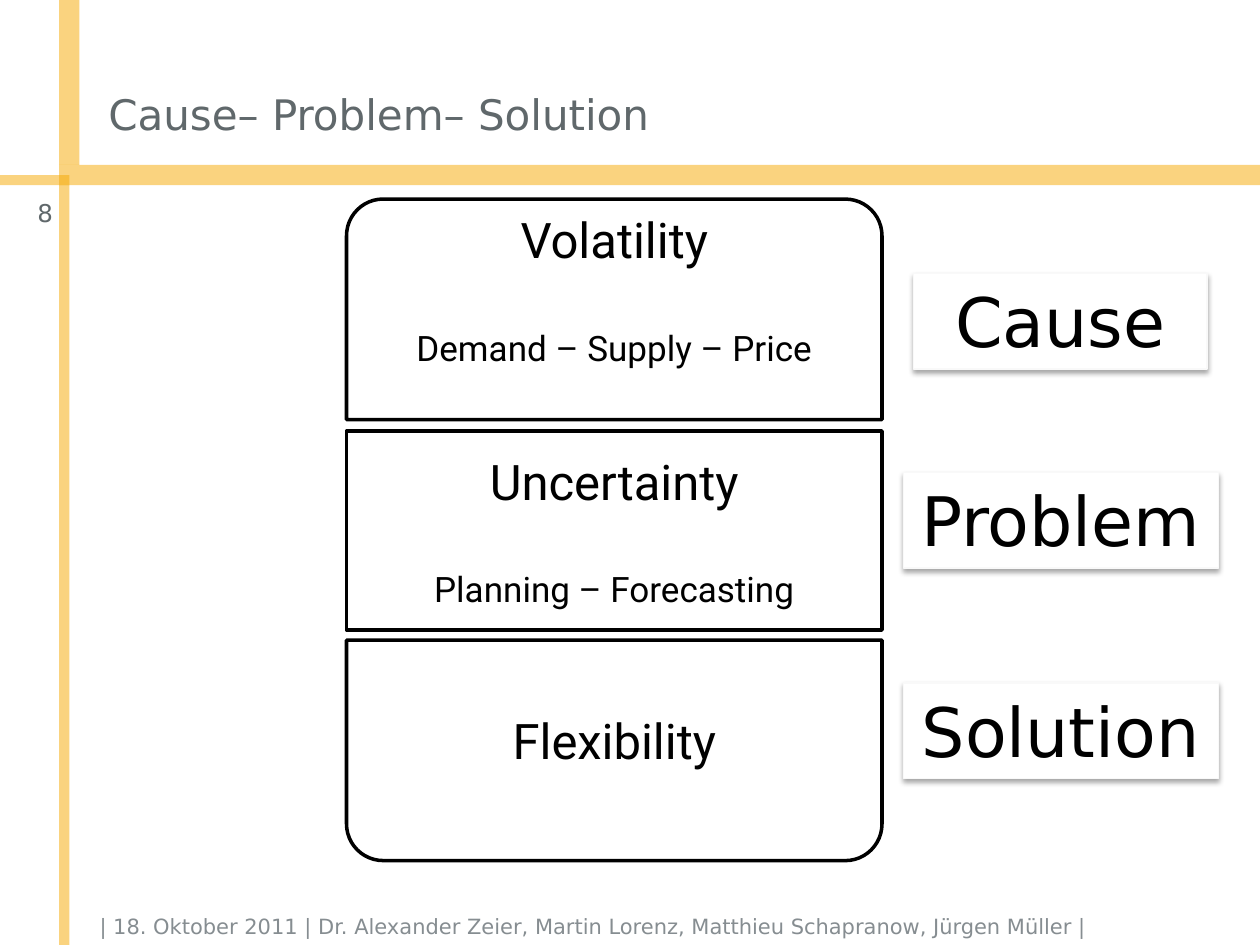
from lxml import etree
from pptx import Presentation
from pptx.dml.color import RGBColor
from pptx.enum.shapes import MSO_SHAPE
from pptx.enum.text import MSO_ANCHOR, MSO_AUTO_SIZE, PP_ALIGN
from pptx.oxml import parse_xml
from pptx.oxml.ns import nsdecls, qn
from pptx.util import Inches, Pt

RECT = MSO_SHAPE.RECTANGLE
ROUND_TOP = MSO_SHAPE.ROUND_2_SAME_RECTANGLE
TOP, MIDDLE, BOTTOM = MSO_ANCHOR.TOP, MSO_ANCHOR.MIDDLE, MSO_ANCHOR.BOTTOM
LEFT, CENTER, RIGHT = PP_ALIGN.LEFT, PP_ALIGN.CENTER, PP_ALIGN.RIGHT

THEME = {
    "sans": "DejaVu Sans", "block_font": "Roboto",
    "accent": "F6A800", "white": "FFFFFF", "black": "000000",
    "gray": "60686B", "footer": "868D91", "label_line": "F9F9F9",
    "title_size": 24, "footer_size": 12, "number_size": 14,
    "heading_size": 28, "detail_size": 20, "label_size": 39,
}


def write(shape, lines, font, color, align, anchor, margin=0.0, gap=0):
    """Fill a shape with (text, size) lines, keeping a gap between them."""
    frame = shape.text_frame
    frame_format = {"word_wrap": True, "auto_size": MSO_AUTO_SIZE.NONE,
                    "vertical_anchor": anchor,
                    "margin_left": Inches(margin), "margin_right": Inches(margin),
                    "margin_top": Inches(margin / 2), "margin_bottom": Inches(margin / 2)}
    for name, value in frame_format.items():
        setattr(frame, name, value)
    for index, (text, size) in enumerate(lines):
        para = frame.add_paragraph() if index else frame.paragraphs[0]
        para.alignment = align
        para.space_before = Pt(gap if index else 0)
        span = para.add_run()
        span.text = text
        for name, value in {"name": THEME[font], "size": Pt(THEME[size])}.items():
            setattr(span.font, name, value)
        span.font.color.rgb = RGBColor.from_string(THEME[color])


def add_panel(kind, place, fill, line=None, width=0):
    """Add a flat filled shape, outlined when a line colour is given."""
    panel = page.shapes.add_shape(kind, *map(Inches, place))
    panel.shadow.inherit = False
    panel.fill.solid()
    panel.fill.fore_color.rgb = RGBColor.from_string(THEME[fill])
    if line:
        panel.line.color.rgb = RGBColor.from_string(THEME[line])
        panel.line.width = Pt(width)
    else:
        panel.line.fill.background()
    return panel


deck = Presentation()
deck.slide_width, deck.slide_height = Inches(10), Inches(7.5)
page = deck.slides.add_slide(deck.slide_layouts[5])

# Half-transparent frame bars
for place in [(0.47, 0, 0.16, 1.31), (0.47, 1.31, 9.53, 0.16),
              (0.47, 1.47, 0.08, 6.03), (0, 1.39, 0.55, 0.08)]:
    bar = add_panel(RECT, place, "accent")
    color = bar.fill._xPr.find(".//" + qn("a:srgbClr"))
    etree.SubElement(color, qn("a:alpha"), val="50000")

# Title
title = page.shapes.title
title.left, title.top, title.width, title.height = map(Inches, (0.86, 0, 6.83, 1.1))
write(title, [("Cause– Problem– Solution", "title_size")], "sans", "gray", LEFT, BOTTOM)

# Footer and page number
footer = page.shapes.add_textbox(*map(Inches, (0.79, 7.17, 8.94, 0.28)))
write(footer, [("| 18. Oktober 2011 | Dr. Alexander Zeier, Martin Lorenz, "
                "Matthieu Schapranow, Jürgen Müller |", "footer_size")],
      "sans", "footer", LEFT, BOTTOM)
number = page.shapes.add_textbox(*map(Inches, (0, 1.57, 0.42, 0.36)))
write(number, [("8", "number_size")], "sans", "gray", RIGHT, TOP)

# Stacked blocks
BLOCK_LEFT, BLOCK_WIDTH = 2.75, 4.25
blocks = [
    (ROUND_TOP, 1.58, 1.75, TOP, "Volatility", "Demand – Supply – Price"),
    (RECT, 3.42, 1.58, MIDDLE, "Uncertainty", "Planning – Forecasting"),
]
for kind, top, height, anchor, heading, detail in blocks:
    block = add_panel(kind, (BLOCK_LEFT, top, BLOCK_WIDTH, height), "white", "black", 2)
    write(block, [(heading, "heading_size"), (detail, "detail_size")],
          "block_font", "black", CENTER, anchor, gap=33)

# Bottom block is turned over, so its upright text has its own box
base = add_panel(ROUND_TOP, (BLOCK_LEFT, 5.08, BLOCK_WIDTH, 1.75), "white", "black", 2)
base.rotation = 180
caption = page.shapes.add_textbox(*map(Inches, (BLOCK_LEFT, 5.59, BLOCK_WIDTH, 0.57)))
write(caption, [("Flexibility", "heading_size")], "block_font", "black", CENTER, TOP, 0.1)

# Shadowed labels
for text, left, top, width in [("Cause", 7.25, 2.17, 2.33),
                               ("Problem", 7.17, 3.75, 2.5),
                               ("Solution", 7.17, 5.42, 2.5)]:
    label = add_panel(RECT, (left, top, width, 0.76), "white", "label_line", 0.75)
    effects = label._element.spPr.find(qn("a:effectLst"))
    effects.append(parse_xml(
        f'<a:outerShdw {nsdecls("a")} blurRad="{Pt(3.1)}" dist="{Pt(1.8)}" '
        f'dir="5400000" rotWithShape="0"><a:srgbClr val="{THEME["black"]}">'
        '<a:alpha val="35000"/></a:srgbClr></a:outerShdw>'))
    write(label, [(text, "label_size")], "sans", "black", CENTER, TOP, 0.1)

deck.save("out.pptx")
